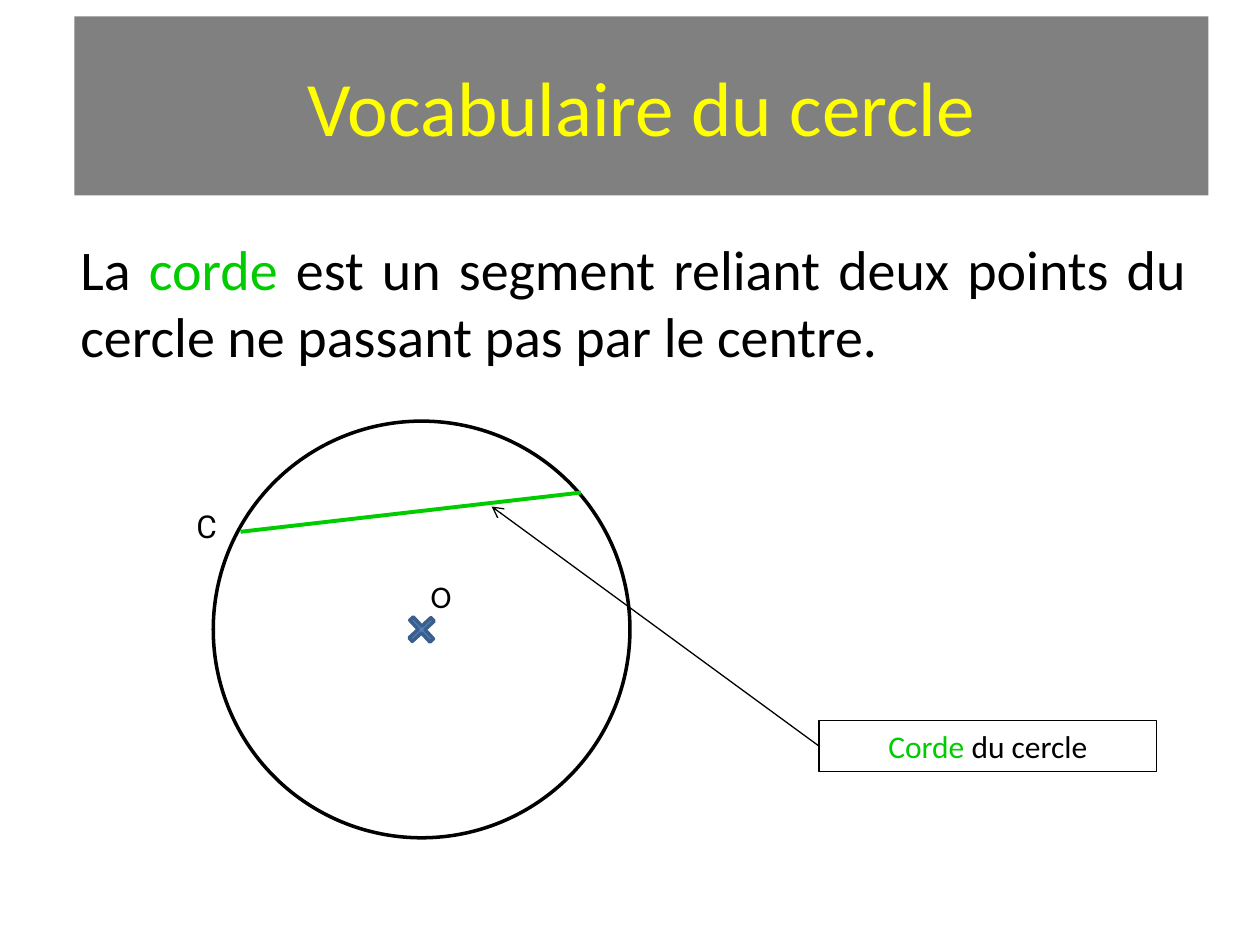
from dataclasses import dataclass
from typing import Optional

from lxml.etree import SubElement
from pptx import Presentation
from pptx.dml.color import RGBColor
from pptx.enum.shapes import MSO_CONNECTOR, MSO_SHAPE
from pptx.enum.text import MSO_ANCHOR, MSO_AUTO_SIZE, PP_ALIGN
from pptx.oxml.ns import qn
from pptx.util import Cm, Pt

HUES = {
    "black": "000000", "white": "FFFFFF", "grey": "808080", "yellow": "FFFF00",
    "green": "00CC00", "blue": "4F81BD", "navy": "3A5F8C",
}


@dataclass
class Bit:
    text: str
    hue: str = "black"


@dataclass
class Box:
    """Text in a frame, lengths in cm."""
    at: tuple[float, float, float, float]
    bits: list[Bit]
    size: int = 18
    font: str = "Calibri"
    align: PP_ALIGN = PP_ALIGN.LEFT
    edge: Optional[str] = None


@dataclass
class Form:
    kind: MSO_SHAPE
    at: tuple[float, float, float, float]
    edge: str
    width: float
    fill: Optional[str] = None
    turn: float = 0


@dataclass
class Line:
    start: tuple[float, float]
    end: tuple[float, float]
    hue: str
    width: float
    arrow: bool = False


def rgb(hue: str) -> RGBColor:
    return RGBColor.from_string(HUES[hue])


def style(run, size: int, font: str, hue: str) -> None:
    run.font.size = Pt(size)
    run.font.name = font
    run.font.color.rgb = rgb(hue)


def draw_form(slide, form: Form):
    shape = slide.shapes.add_shape(form.kind, *map(Cm, form.at))
    shape.shadow.inherit = False
    shape.rotation = form.turn
    if form.fill:
        shape.fill.solid()
        shape.fill.fore_color.rgb = rgb(form.fill)
    else:
        shape.fill.background()
    shape.line.color.rgb = rgb(form.edge)
    shape.line.width = Pt(form.width)
    return shape


def draw_box(slide, box: Box):
    if box.edge:
        shape = draw_form(slide, Form(MSO_SHAPE.RECTANGLE, box.at, box.edge, 0.75))
    else:
        shape = slide.shapes.add_textbox(*map(Cm, box.at))
    frame = shape.text_frame
    frame.word_wrap = True
    frame.auto_size = MSO_AUTO_SIZE.SHAPE_TO_FIT_TEXT
    frame.vertical_anchor = MSO_ANCHOR.TOP
    para = frame.paragraphs[0]
    para.alignment = box.align
    for bit in box.bits:
        run = para.add_run()
        run.text = bit.text
        style(run, box.size, box.font, bit.hue)
    return shape


def draw_line(slide, line: Line):
    link = slide.shapes.add_connector(
        MSO_CONNECTOR.STRAIGHT, *map(Cm, line.start + line.end))
    link.line.color.rgb = rgb(line.hue)
    link.line.width = Pt(line.width)
    if line.arrow:
        SubElement(link._element.spPr.find(qn("a:ln")), qn("a:tailEnd"), type="arrow")
    SubElement(link._element.spPr, qn("a:effectLst"))
    return link


def draw_title(slide, text: str) -> None:
    title = slide.shapes.title
    title.left, title.top, title.width, title.height = map(Cm, (1.5, 0.33, 22.86, 3.61))
    title.fill.solid()
    title.fill.fore_color.rgb = rgb("grey")
    frame = title.text_frame
    frame.text = text
    frame.vertical_anchor = MSO_ANCHOR.MIDDLE
    para = frame.paragraphs[0]
    para.alignment = PP_ALIGN.CENTER
    style(para.runs[0], 44, "Calibri", "yellow")


def main() -> None:
    deck = Presentation()
    deck.slide_width, deck.slide_height = Cm(25.4), Cm(19.05)
    slide = deck.slides.add_slide(deck.slide_layouts[5])
    draw_title(slide, "Vocabulaire du cercle")

    draw_box(slide, Box((1.37, 4.6, 22.81, 3), [
        Bit("La "), Bit("corde", "green"),
        Bit(" est un segment reliant deux points du cercle ne passant pas par le centre."),
    ], size=32, align=PP_ALIGN.JUSTIFY, edge="white"))

    mid_x, mid_y, radius, arm = 8.5, 12.69, 4.2, 0.3
    draw_form(slide, Form(
        MSO_SHAPE.OVAL, (mid_x - radius, mid_y - radius, 2 * radius, 2 * radius), "black", 2))
    cross = draw_form(slide, Form(
        MSO_SHAPE.CROSS, (mid_x - arm, mid_y - arm, 2 * arm, 2 * arm),
        "navy", 2, "blue", 317.3))
    cross.adjustments[0] = 0.42

    draw_box(slide, Box((8.43, 11.51, 1, 1.02), [Bit("O")]))
    draw_box(slide, Box((3.71, 10.1, 2.29, 1.02), [Bit("C")], font="Roboto"))
    draw_line(slide, Line((4.85, 10.72), (11.71, 9.93), "green", 2.25))

    label = draw_box(slide, Box(
        (16.51, 14.53, 6.81, 1.02), [Bit("Corde ", "green"), Bit("du cercle")],
        align=PP_ALIGN.CENTER, edge="black"))
    arrow = draw_line(slide, Line((16.51, 15.04), (9.91, 10.21), "black", 0.75, True))
    arrow.begin_connect(label, 1)

    deck.save("out.pptx")


if __name__ == "__main__":
    main()
